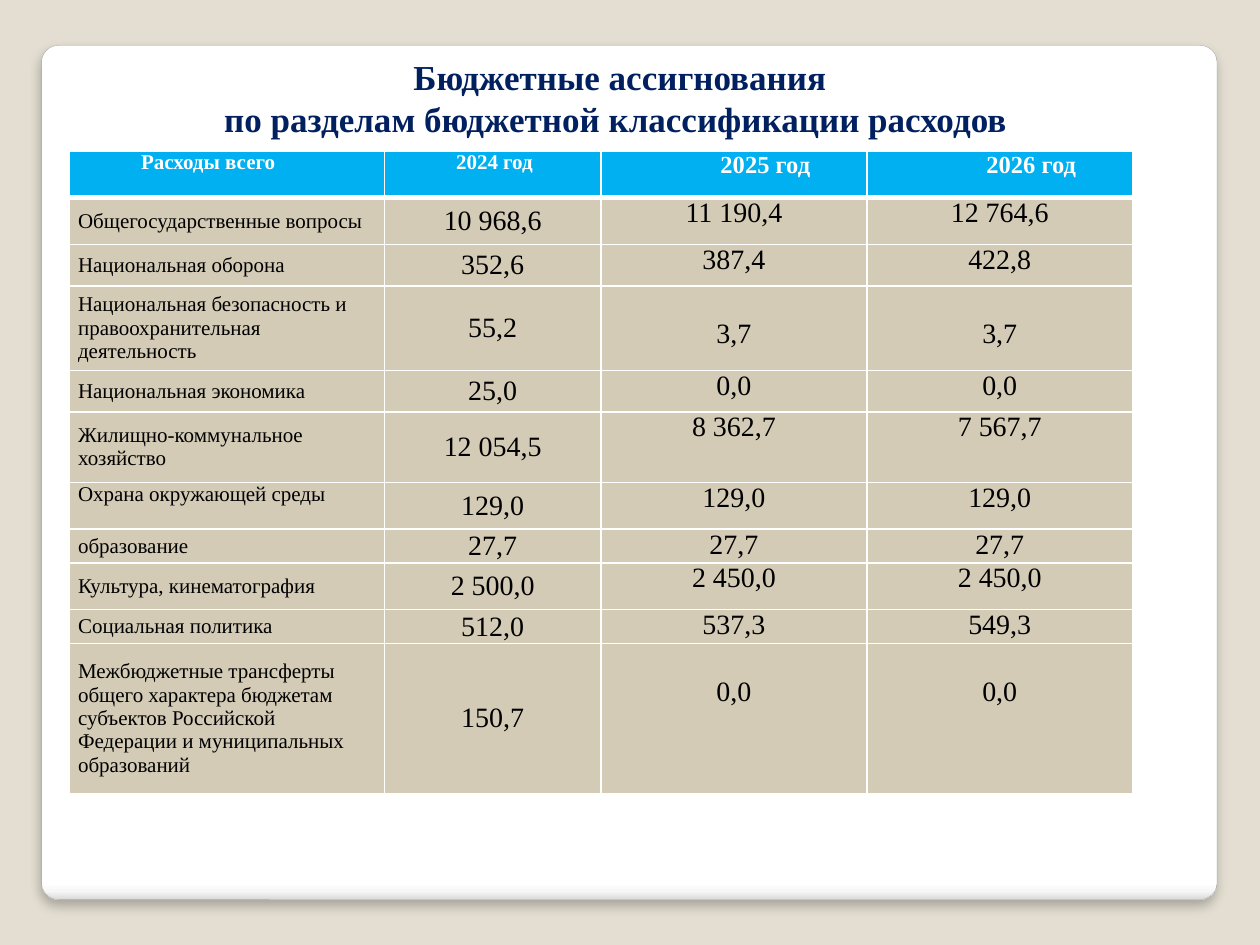
from pptx import Presentation
from pptx import util as u
from pptx.dml.color import RGBColor
from pptx.enum import shapes, text
from pptx.oxml import parse_xml
from pptx.oxml.ns import nsdecls

TITLE = "Бюджетные ассигнования\vпо разделам бюджетной классификации расходов "
HEADER = ("Расходы всего", "2024 год", "2025 год", "2026 год")
# section, 2024, 2025, 2026, row height in inches
EXPENSES = [
    ("Общегосударственные вопросы", "10 968,6", "11 190,4", "12 764,6", 0.37),
    ("Национальная оборона", "352,6", "387,4", "422,8", 0.33),
    ("Национальная безопасность и правоохранительная деятельность",
     "55,2", "3,7", "3,7", 0.67),
    ("Национальная экономика", "25,0", "0,0", "0,0", 0.33),
    ("Жилищно-коммунальное хозяйство", "12 054,5", "8 362,7", "7 567,7", 0.56),
    ("Охрана окружающей среды", "129,0", "129,0", "129,0", 0.37),
    ("образование", "27,7", "27,7", "27,7", 0.27),
    ("Культура, кинематография", "2 500,0", "2 450,0", "2 450,0", 0.37),
    ("Социальная политика", "512,0", "537,3", "549,3", 0.27),
    ("Межбюджетные трансферты общего характера бюджетам субъектов "
     "Российской Федерации и муниципальных образований",
     "150,7", "0,0", "0,0", 1.19),
]
TOP_SECTION = "Охрана окружающей среды"
LOWERED_ROWS = (3, 10)  # their 2025 and 2026 values sit one line lower
COLUMN_WIDTHS = (2.5, 1.72, 2.11, 2.11)
HEADER_HEIGHT = 0.37
THEME = {
    "font": "Times New Roman",
    "background": "E3DED1", "panel_line": "A4A4A4", "title": "002060",
    "header": "00B0F0", "body": "D3CBB6", "white": "FFFFFF", "black": "000000",
    "panel_stops": ((0, "FFFFFF"), (98, "FFFFFF"), (99, "F7F7F7"), (100, "DADADA")),
    "title_size": 20, "label_size": 12, "year_size": 14, "value_size": 16,
}


def color(name):
    return RGBColor.from_string(THEME[name])


def style(paragraph, size, ink, bold=False):
    for run in paragraph.runs:
        run.font.name = THEME["font"]
        run.font.size = u.Pt(size)
        run.font.bold = bold
        run.font.color.rgb = color(ink)


def add_panel(slide):
    panel = slide.shapes.add_shape(
        shapes.MSO_SHAPE.ROUNDED_RECTANGLE,
        *map(u.Inches, (0.33, 0.36, 9.33, 6.78)))
    panel.adjustments[0] = 0.02
    panel.line.color.rgb = color("panel_line")
    panel.line.width = u.Pt(0.16)
    panel.shadow.inherit = False
    stops = "".join(f'<a:gs pos="{share * 1000}"><a:srgbClr val="{shade}"/></a:gs>'
                    for share, shade in THEME["panel_stops"])
    properties = panel.element.spPr
    properties.find("{*}prstGeom").addnext(parse_xml(
        f'<a:gradFill {nsdecls("a")} rotWithShape="1"><a:gsLst>{stops}</a:gsLst>'
        '<a:lin ang="5400000" scaled="0"/></a:gradFill>'))
    properties.find("{*}effectLst").append(parse_xml(
        f'<a:outerShdw {nsdecls("a")} blurRad="{u.Pt(6)}" dist="{u.Pt(4)}" '
        'dir="5400000" algn="t" rotWithShape="0"><a:srgbClr val="000000">'
        '<a:alpha val="25000"/></a:srgbClr></a:outerShdw>'))


def add_title(slide):
    title = slide.shapes.add_textbox(*map(u.Inches, (0.78, 0.39, 8.28, 0.77)))
    frame = title.text_frame
    frame.word_wrap = True
    frame.vertical_anchor = text.MSO_ANCHOR.MIDDLE
    heading = frame.paragraphs[0]
    heading.text = TITLE
    heading.alignment = text.PP_ALIGN.CENTER
    style(heading, THEME["title_size"], "title", bold=True)


def set_borders(cell, widths):
    """Draw white borders; widths are points for left, right, top, bottom."""
    for position, (side, width) in enumerate(zip("LRTB", widths)):
        cell._tc.get_or_add_tcPr().insert(position, parse_xml(
            f'<a:ln{side} {nsdecls("a")} w="{u.Pt(width)}"><a:solidFill>'
            f'<a:srgbClr val="{THEME["white"]}"/></a:solidFill></a:ln{side}>'))


def fill_cell(cell, words, row, column):
    is_header = row == 0
    cell.fill.solid()
    cell.fill.fore_color.rgb = color("header" if is_header else "body")
    cell.margin_left = cell.margin_right = u.Inches(0.07)
    lowered = row in LOWERED_ROWS and column > 1
    cell.margin_top = u.Inches(0.26 if lowered else 0)
    cell.margin_bottom = 0
    centred_down = not is_header and column < 2 and words != TOP_SECTION
    cell.vertical_anchor = (text.MSO_ANCHOR.MIDDLE if centred_down
                            else text.MSO_ANCHOR.TOP)
    entry = cell.text_frame.paragraphs[0]
    entry.text = words
    if column > (1 if is_header else 0):
        entry.alignment = text.PP_ALIGN.CENTER
    if is_header:
        entry._p.get_or_add_pPr().set("indent", str(u.Inches(0.5)))
        size = THEME["year_size" if column > 1 else "label_size"]
        style(entry, size, "white", bold=True)
    else:
        style(entry, THEME["value_size" if column else "label_size"], "black")
    set_borders(cell, (1, 1, 3 if row == 1 else 1, 3 if is_header else 1))


def add_expenses(slide):
    rows = [HEADER] + [expense[:-1] for expense in EXPENSES]
    heights = [HEADER_HEIGHT] + [expense[-1] for expense in EXPENSES]
    table = slide.shapes.add_table(
        len(rows), len(COLUMN_WIDTHS), u.Inches(0.55), u.Inches(1.2),
        u.Inches(sum(COLUMN_WIDTHS)), u.Inches(sum(heights))).table
    for column, width in zip(table.columns, COLUMN_WIDTHS):
        column.width = u.Inches(width)
    for row, (entries, height) in enumerate(zip(rows, heights)):
        table.rows[row].height = u.Inches(height)
        for column, words in enumerate(entries):
            fill_cell(table.cell(row, column), words, row, column)


def main():
    deck = Presentation()
    deck.slide_width, deck.slide_height = u.Inches(10), u.Inches(7.5)
    slide = deck.slides.add_slide(deck.slide_layouts[6])
    slide.background.fill.solid()
    slide.background.fill.fore_color.rgb = color("background")
    add_panel(slide)
    add_title(slide)
    add_expenses(slide)
    deck.save("out.pptx")


if __name__ == "__main__":
    main()
